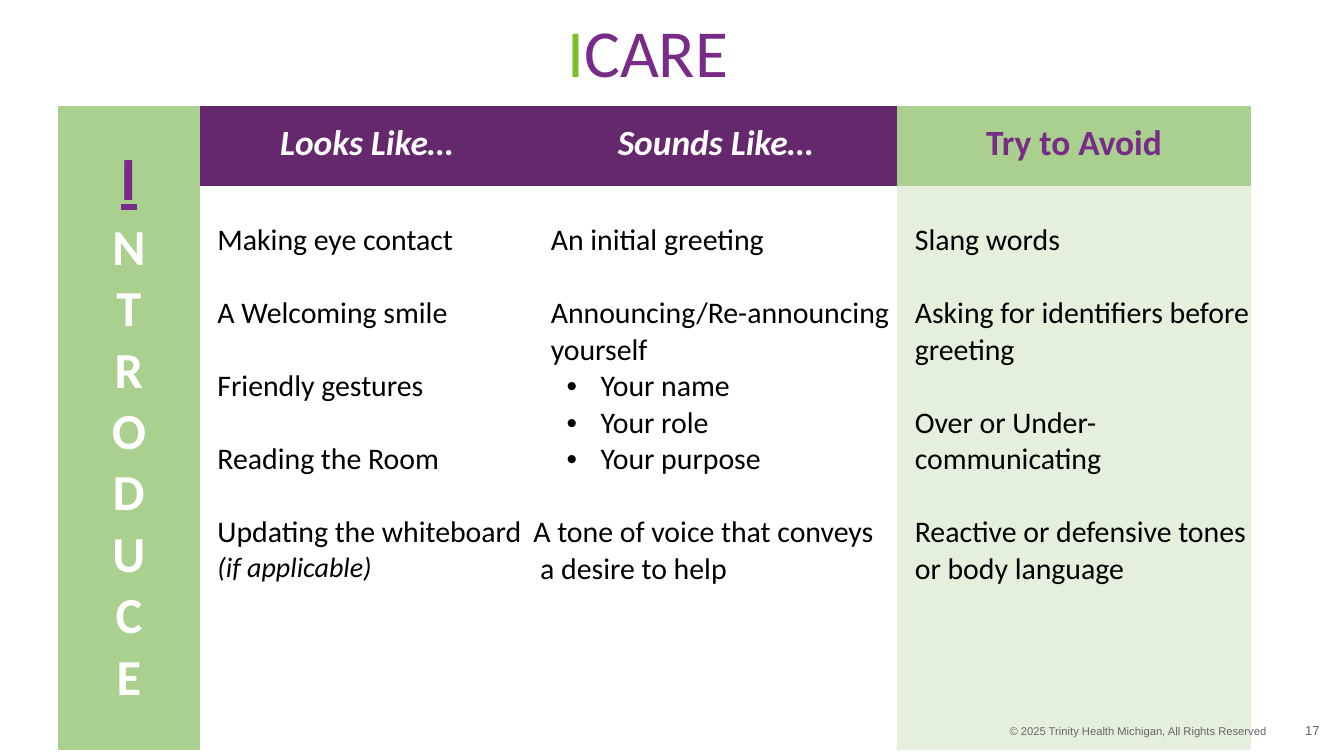
from lxml.etree import SubElement
from pptx import Presentation
from pptx.dml.color import RGBColor
from pptx.enum.text import MSO_ANCHOR as ANCHOR, PP_ALIGN as ALIGN
from pptx.oxml.ns import qn
from pptx.util import Cm, Pt

PURPLE = RGBColor(0x78, 0x2C, 0x87)
DARK_PURPLE = RGBColor(0x65, 0x28, 0x6D)
GREEN = RGBColor(0xA9, 0xD0, 0x8E)
LIME = RGBColor(0x7A, 0xBF, 0x29)
PALE_GREEN = RGBColor(0xE4, 0xF0, 0xDC)
GREY = RGBColor(0x66, 0x66, 0x66)
WHITE = RGBColor(0xFF, 0xFF, 0xFF)
BLACK = RGBColor(0, 0, 0)
NO_STYLE = "{2D5ABB26-0587-4C30-8999-92F81FD0307C}"
LINE = Pt(19.5)


def add_run(p, text, color, size, **fmt):
    r = p.add_run()
    r.text = text
    r.font.color.rgb = color
    for name, value in {"name": "Calibri", "size": Pt(size), **fmt}.items():
        setattr(r.font, name, value)


def add_box(left, top, width, height, align, **fmt):
    tf = s.shapes.add_textbox(Cm(left), Cm(top), Cm(width), Cm(height)).text_frame
    for name, value in {"word_wrap": True, **fmt}.items():
        setattr(tf, name, value)
    tf.paragraphs[0].alignment = align
    return tf.paragraphs[0]


prs = Presentation()
prs.slide_width, prs.slide_height = Cm(25.4), Cm(14.28)
s = prs.slides.add_slide(prs.slide_layouts[6])

p = add_box(23.83, 13.41, 1.11, 0.76, ALIGN.RIGHT,
            vertical_anchor=ANCHOR.MIDDLE, margin_right=0)
add_run(p, "17", GREY, 7, name="Arial")

widths = [2.69, 6.3, 6.88, 6.68]
table = s.shapes.add_table(2, 4, Cm(1.09), Cm(2.01), Cm(sum(widths)), Cm(11.23)).table
table.first_row = table.horz_banding = False
table._tbl.tblPr.find(qn("a:tableStyleId")).text = NO_STYLE
for column, width in zip(table.columns, widths):
    column.width = Cm(width)
for row, height in zip(table.rows, [1.5, 9.73]):
    row.height = Cm(height)
    for cell in row.cells:
        cell.margin_left = cell.margin_right = cell.margin_top = 0
        cell.margin_bottom = Cm(0.1)
        cell.fill.background()

cell = table.cell(0, 0)
cell.merge(table.cell(1, 0))
cell.fill.solid()
cell.fill.fore_color.rgb = GREEN
cell.vertical_anchor = ANCHOR.MIDDLE
tf = cell.text_frame
for i, letter in enumerate("INTRODUCE"):
    p = tf.add_paragraph() if i else tf.paragraphs[0]
    p.alignment = ALIGN.CENTER
    if i:
        add_run(p, letter, WHITE, 27, bold=True)
    else:
        add_run(p, letter, PURPLE, 33, bold=True, underline=True)

headers = [
    ("Looks Like…", DARK_PURPLE, WHITE, True),
    ("Sounds Like…", DARK_PURPLE, WHITE, True),
    ("Try to Avoid", GREEN, PURPLE, False),
]
for col, (text, fill, color, italic) in enumerate(headers, 1):
    cell = table.cell(0, col)
    cell.fill.solid()
    cell.fill.fore_color.rgb = fill
    cell.vertical_anchor = ANCHOR.MIDDLE
    p = cell.text_frame.paragraphs[0]
    p.alignment = ALIGN.CENTER
    add_run(p, text, color, 19, bold=True, italic=italic)

formats = {
    "item": {"left": 0.33, "hang": 0, "before": LINE},
    "bullet": {"left": 1.27, "hang": -0.64, "before": 0},
    "flush": {"left": 0, "hang": 0, "before": LINE},
    "follow": {"left": 0.13, "hang": 0, "before": 0},
}
bodies = [
    [("item", "Making eye contact"), ("item", "A Welcoming smile"),
     ("item", "Friendly gestures"), ("item", "Reading the Room"),
     ("item", "Updating the whiteboard ")],
    [("item", "An initial greeting"), ("item", "Announcing/Re-announcing yourself"),
     ("bullet", "Your name"), ("bullet", "Your role"), ("bullet", "Your purpose"),
     ("flush", "A tone of voice that conveys"), ("follow", "a desire to help")],
    [("item", "Slang words"), ("item", "Asking for identifiers before greeting"),
     ("item", "Over or Under-communicating"),
     ("item", "Reactive or defensive tones or body language")],
]
for col, body in enumerate(bodies, 1):
    cell = table.cell(1, col)
    cell.margin_top = LINE
    tf = cell.text_frame
    for i, (kind, text) in enumerate(body):
        p = tf.add_paragraph() if i else tf.paragraphs[0]
        fmt = formats[kind]
        pPr = p._p.get_or_add_pPr()
        pPr.set("marL", str(Cm(fmt["left"])))
        pPr.set("indent", str(Cm(fmt["hang"])))
        if kind == "bullet":
            SubElement(pPr, qn("a:buFont")).set("typeface", "Arial")
            SubElement(pPr, qn("a:buChar")).set("char", "•")
        if i and fmt["before"]:
            p.space_before = fmt["before"]
        add_run(p, text, BLACK, 16)
        if text.startswith("Updating"):
            add_run(p, "(if applicable)", BLACK, 15, italic=True)
cell = table.cell(1, 3)
cell.fill.solid()
cell.fill.fore_color.rgb = PALE_GREEN

p = add_box(0.84, 0.36, 22.81, 1.4, ALIGN.CENTER,
            margin_left=0, margin_top=0, margin_right=0, margin_bottom=0)
p.line_spacing = 0.9
add_run(p, "I", LIME, 36)
add_run(p, "CARE", PURPLE, 36)

p = add_box(13.54, 13.56, 10.64, 0.51, ALIGN.RIGHT)
add_run(p, "© 2025 Trinity Health Michigan, All Rights Reserved", GREY, 6, name="Arial")

prs.save("out.pptx")
